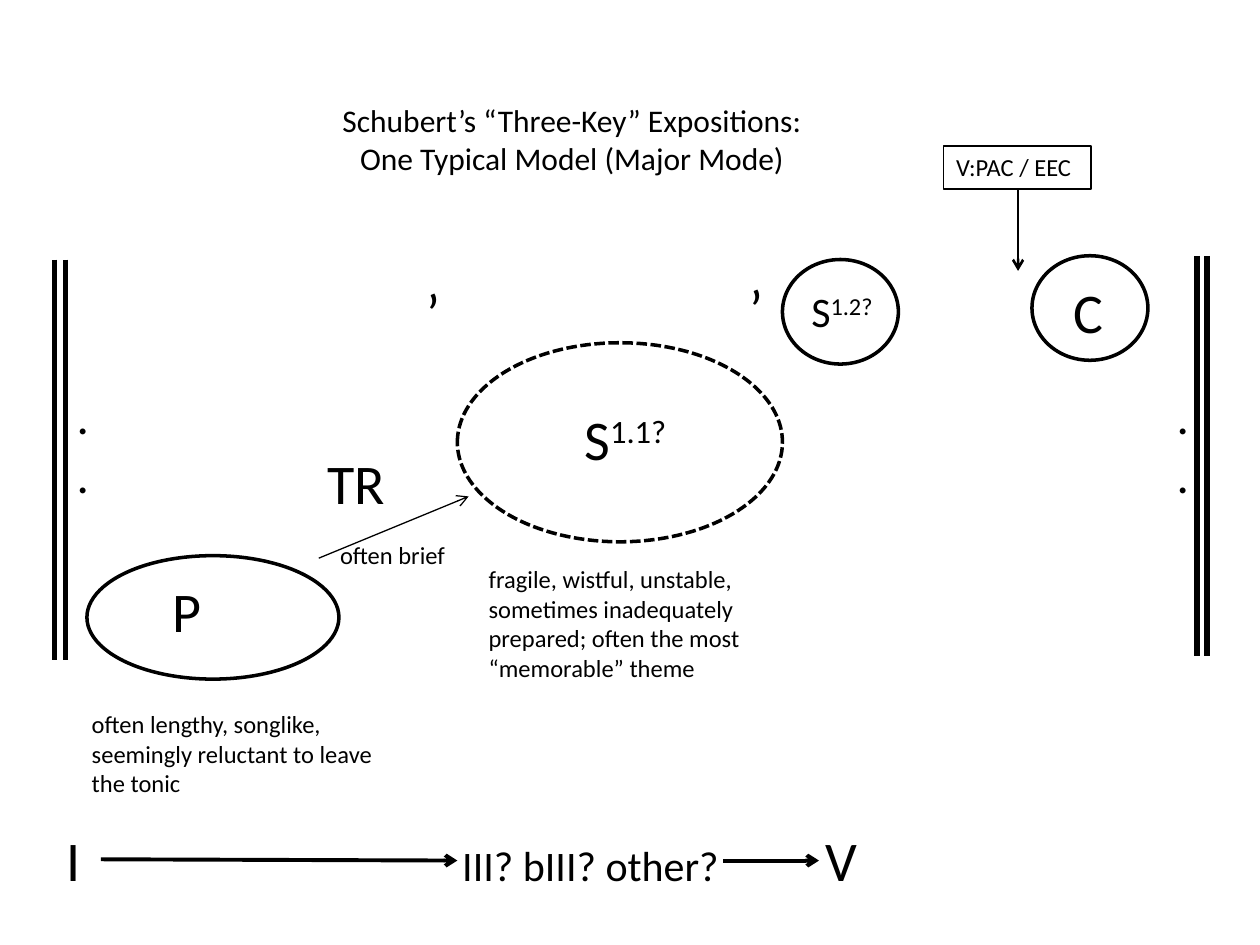
from dataclasses import dataclass

from lxml.etree import SubElement
from pptx import Presentation
from pptx.dml.color import RGBColor
from pptx.enum.dml import MSO_LINE as Dash
from pptx.enum.shapes import MSO_CONNECTOR, MSO_SHAPE as Shape
from pptx.enum.text import MSO_ANCHOR, MSO_AUTO_SIZE as AutoSize, PP_ALIGN as Align
from pptx.oxml.ns import qn
from pptx.util import Inches, Pt


@dataclass(frozen=True)
class Theme:
    font: str = "Calibri"
    ink: RGBColor = RGBColor(0, 0, 0)
    note: int = 14
    title: int = 18
    key: int = 24
    dots: int = 28
    theme_label: int = 32
    thin: float = 0.75
    medium: float = 1.5
    outline: float = 2
    arrow: float = 2.25
    barline: float = 3


THEME = Theme()


def add_run(p, text, size, raised=False):
    r = p.add_run()
    r.text = text
    r.font.name, r.font.size = THEME.font, Pt(size)
    r.font.color.rgb = THEME.ink
    if raised:
        r.font._element.set("baseline", "30000")


def write(tf, text, *, size=THEME.note, align=Align.LEFT, raised="", wrap=True):
    """Put text, one paragraph a line, into a frame; raised is a superscript."""
    tf.word_wrap = wrap
    tf.auto_size = AutoSize.NONE
    tf.vertical_anchor = MSO_ANCHOR.TOP
    for i, line in enumerate(text.split("\n")):
        p = tf.paragraphs[0] if i == 0 else tf.add_paragraph()
        p.alignment = align
        add_run(p, line, size)
    if raised:
        add_run(p, raised, size, raised=True)


class Diagram:
    def __init__(self, prs, theme):
        self.theme = theme
        self.slide = prs.slides.add_slide(prs.slide_layouts[5])
        self.shapes = self.slide.shapes

    def stroke(self, line, width):
        line.color.rgb = self.theme.ink
        line.width = Pt(width)

    def title(self, text, box):
        sp = self.shapes.title
        sp.left, sp.top, sp.width, sp.height = map(Inches, box)
        write(sp.text_frame, text, size=self.theme.title, align=Align.CENTER)

    def text(self, text, box, **style):
        sp = self.shapes.add_textbox(*map(Inches, box))
        write(sp.text_frame, text, **style)

    def outline(self, kind, box, width, dash=None):
        sp = self.shapes.add_shape(kind, *map(Inches, box))
        sp.shadow.inherit = False
        sp.fill.background()
        self.stroke(sp.line, width)
        if dash:
            sp.line.dash_style = dash
        return sp

    def line(self, start, end, width, arrow=False):
        sp = self.shapes.add_connector(
            MSO_CONNECTOR.STRAIGHT, *map(Inches, (*start, *end)))
        self.stroke(sp.line, width)
        if arrow:
            SubElement(sp.line._get_or_add_ln(), qn("a:tailEnd"), type="arrow")
        SubElement(sp._element.spPr, qn("a:effectLst"))

    def key_row(self, box, parts, stops):
        """One line of (text, size) parts, set apart by tab stops."""
        tf = self.shapes.add_textbox(*map(Inches, box)).text_frame
        tf.word_wrap = True
        p = tf.paragraphs[0]
        tabs = SubElement(p._p.get_or_add_pPr(), qn("a:tabLst"))
        for stop in stops:
            SubElement(tabs, qn("a:tab"), pos=str(Inches(stop)), algn="l")
        for text, size in parts:
            add_run(p, text, size)


def main():
    prs = Presentation()
    prs.slide_width, prs.slide_height = Inches(10), Inches(7.5)
    t = THEME
    d = Diagram(prs, t)

    d.title("Schubert’s “Three-Key” Expositions:\nOne Typical Model (Major Mode)",
            (2.58, 0.75, 3.92, 0.71))

    # Theme zones
    for box, dash in (
        ((0.69, 4.41, 2, 0.98), None),
        ((3.63, 2.72, 2.58, 1.58), Dash.SQUARE_DOT),
        ((6.21, 2.06, 0.92, 0.83), None),
        ((8.19, 2.03, 0.92, 0.83), None),
    ):
        d.outline(Shape.OVAL, box, t.outline, dash)

    # Theme labels and caesura marks
    for label, box in (
        ("TR", (2.5, 3.51, 0.77, 0.64)),
        ("P", (1.27, 4.53, 0.58, 0.64)),
        ("C", (8.42, 2.15, 0.58, 0.64)),
        ("’", (3.29, 2.15, 0.39, 0.64)),
        ("’", (5.85, 2.12, 0.39, 0.64)),
    ):
        d.text(label, box, size=t.theme_label)
    d.text("S", (4.54, 3.16, 0.93, 0.64), size=t.theme_label, raised="1.1?", wrap=False)
    d.text("S", (6.34, 2.22, 0.79, 0.5), size=t.key, raised="1.2?")

    # Repeat signs: a double barline and two dots at each end
    for bars, top, dots_left in (((0.43, 0.52), 2.06, 0.51), ((9.5, 9.58), 2.03, 9.24)):
        for x in bars:
            d.line((x, top), (x, top + 3.18), t.barline)
        d.text(".\n.", (dots_left, 3.01, 0.34, 1.04), size=t.dots)

    # Comments on the themes
    for note, box in (
        ("fragile, wistful, unstable, sometimes inadequately prepared; "
         "often the most “memorable” theme", (3.78, 4.43, 2.67, 1.04)),
        ("often brief", (2.6, 4.24, 1.12, 0.34)),
        ("often lengthy, songlike, seemingly reluctant to leave the tonic",
         (0.63, 5.58, 2.67, 0.81)),
    ):
        d.text(note, box)

    # Cadence box
    cadence = d.outline(Shape.RECTANGLE, (7.49, 1.16, 1.17, 0.34), t.thin)
    write(cadence.text_frame, "V:PAC / EEC")

    # Key plan
    d.key_row((0.43, 6.5, 8.98, 0.64),
              (("I\t", t.theme_label), ("III? bIII? other?\t", t.key), ("V", t.theme_label)),
              stops=(3.14, 6.02))

    # Arrows: transition, cadence, key moves
    for start, end, width in (
        ((2.53, 4.43), (3.72, 3.94), t.thin),
        ((8.08, 1.5), (8.08, 2.15), t.medium),
        ((0.8, 6.82), (3.63, 6.83), t.arrow),
        ((5.74, 6.83), (6.5, 6.83), t.arrow),
    ):
        d.line(start, end, width, arrow=True)

    prs.save("out.pptx")


if __name__ == "__main__":
    main()
